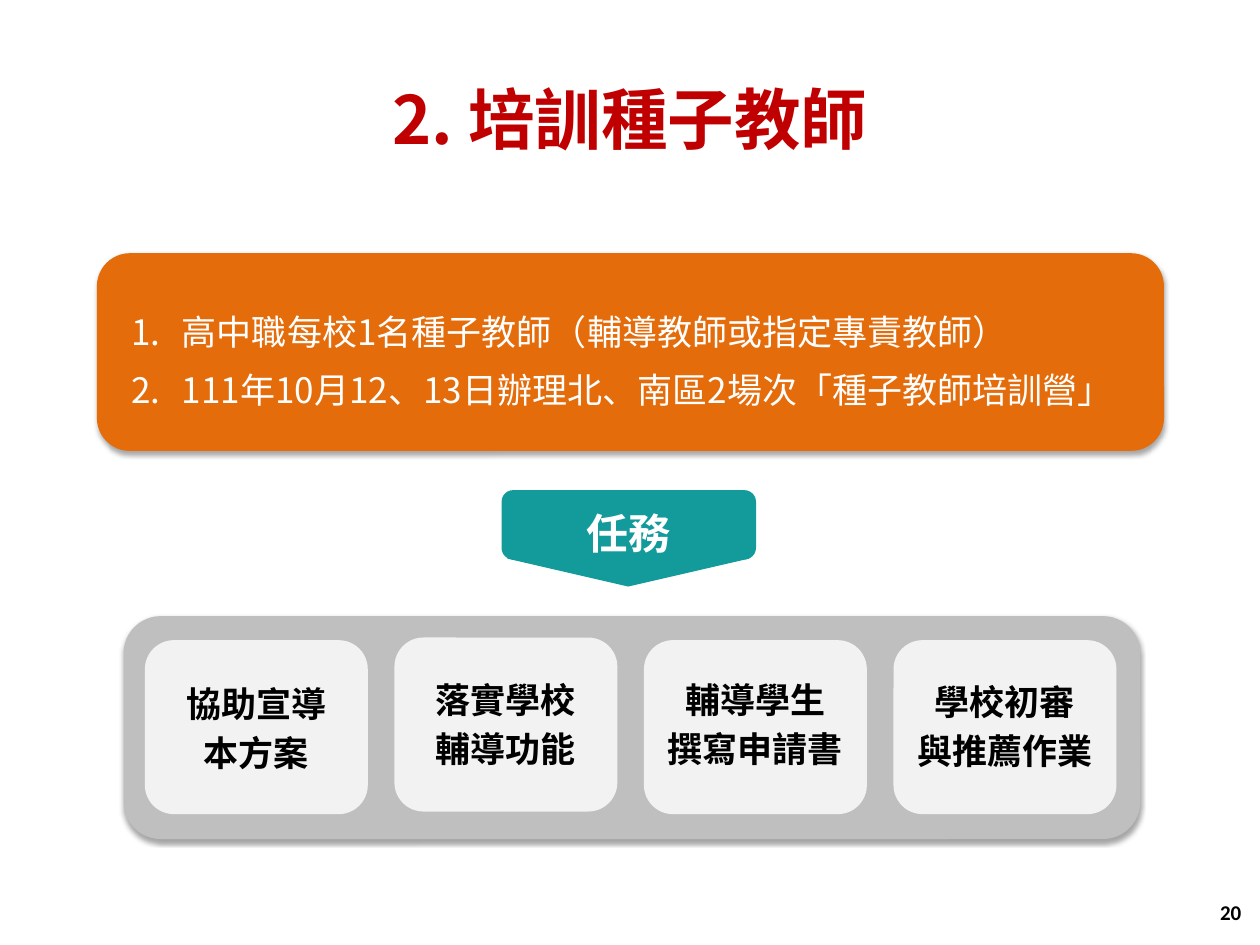
from lxml.etree import SubElement
from pptx import Presentation
from pptx.dml.color import RGBColor
from pptx.enum.shapes import MSO_SHAPE
from pptx.enum.text import MSO_ANCHOR, PP_ALIGN
from pptx.oxml.ns import qn
from pptx.util import Pt

COLORS = {
    "title": "C00000", "plan": "E46C0A", "panel": "BFBFBF", "tile": "F2F2F2",
    "task": "139A9A", "white": "FFFFFF", "black": "000000",
}
CJK = "Noto Sans CJK SC"

TITLE = "2. 培訓種子教師"
PLAN = [
    "高中職每校1名種子教師（輔導教師或指定專責教師）",
    "111年10月12、13日辦理北、南區2場次「種子教師培訓營」",
]
TASK = "任務"
# lines, tile top, text top
DUTIES = [
    (["協助宣導", "本方案"], 365.8, 378),
    (["落實學校", "輔導功能"], 364.3, 375.8),
    (["輔導學生", "撰寫申請書"], 365.8, 375.8),
    (["學校初審", "與推薦作業"], 365.8, 376.8),
]
PAGE = "20"

TILE_LEFT, TILE_STEP, TILE_WIDTH, TILE_HEIGHT = 82.8, 142.6, 127.4, 99.4
DUTY_HEIGHT = 75.6


def write(shape, lines, size=20, color="black", bold=True, font=CJK,
          align=PP_ALIGN.CENTER, anchor=MSO_ANCHOR.MIDDLE,
          spacing=None, gap=0, numbered=False):
    frame = shape.text_frame
    frame.word_wrap = True
    frame.vertical_anchor = anchor
    for i, line in enumerate(lines):
        paragraph = frame.paragraphs[0] if i == 0 else frame.add_paragraph()
        paragraph.alignment = align
        if spacing:
            paragraph.line_spacing = spacing
        if i and gap:
            paragraph.space_before = Pt(gap)
        if numbered:
            properties = paragraph._p.get_or_add_pPr()
            properties.set("marL", str(Pt(36)))
            properties.set("indent", str(Pt(-28.8)))
            SubElement(properties, qn("a:buFont"), typeface="+mj-lt")
            SubElement(properties, qn("a:buAutoNum"), type="arabicPeriod")
        run = paragraph.add_run()
        run.text = line
        run.font.size = Pt(size)
        run.font.bold = bold
        run.font.name = font
        run.font.color.rgb = RGBColor.from_string(COLORS[color])
        SubElement(run._r.get_or_add_rPr(), qn("a:ea"), typeface=font)


def add_block(shapes, kind, box, color):
    block = shapes.add_shape(kind, *map(Pt, box))
    block.shadow.inherit = False
    block.fill.solid()
    block.fill.fore_color.rgb = RGBColor.from_string(COLORS[color])
    block.line.fill.background()
    return block


def add_soft_shadow(block):
    effects = block._element.spPr.find(qn("a:effectLst"))
    shadow = SubElement(effects, qn("a:outerShdw"), blurRad=str(Pt(3.1)),
                        dist=str(Pt(1.8)), dir="5400000", rotWithShape="0")
    shade = SubElement(shadow, qn("a:srgbClr"), val=COLORS["black"])
    SubElement(shade, qn("a:alpha"), val="35000")


def add_text(shapes, box, lines, **style):
    write(shapes.add_textbox(*map(Pt, box)), lines, **style)


deck = Presentation()
deck.slide_width, deck.slide_height = Pt(720), Pt(540)
slide = deck.slides.add_slide(deck.slide_layouts[6])

add_text(slide.shapes, (0, 44.6, 720, 45.4), [TITLE], size=38, color="title")

plan = add_block(slide.shapes, MSO_SHAPE.ROUNDED_RECTANGLE,
                 (55.4, 144.7, 609.8, 113), "plan")
add_soft_shadow(plan)
write(plan, PLAN, color="white", bold=False, align=PP_ALIGN.LEFT,
      spacing=1.4, numbered=True)

duties = slide.shapes.add_group_shape().shapes
panel = add_block(duties, MSO_SHAPE.ROUNDED_RECTANGLE,
                  (70.6, 352.1, 581, 127.4), "panel")
add_soft_shadow(panel)
for column, (lines, tile_top, text_top) in enumerate(DUTIES):
    left = TILE_LEFT + column * TILE_STEP
    add_block(duties, MSO_SHAPE.ROUNDED_RECTANGLE,
              (left, tile_top, TILE_WIDTH, TILE_HEIGHT), "tile")
    add_text(duties, (left, text_top, TILE_WIDTH, DUTY_HEIGHT), lines, gap=4)

task = slide.shapes.add_group_shape().shapes
pointer = add_block(task, MSO_SHAPE.PENTAGON, (344.2, 251.3, 29.5, 138.2), "task")
pointer.adjustments[0] = 0.54
pointer.rotation = 90
add_block(task, MSO_SHAPE.ROUNDED_RECTANGLE, (286.6, 280.1, 145.4, 39.6), "task")
add_text(task, (286.6, 283.7, 145.4, 36.7), [TASK], size=24, color="white",
         anchor=MSO_ANCHOR.TOP, spacing=1.1)

add_text(slide.shapes, (548.6, 506.9, 167.8, 28.8), [PAGE], size=12,
         font="Calibri", align=PP_ALIGN.RIGHT)

deck.save("out.pptx")
